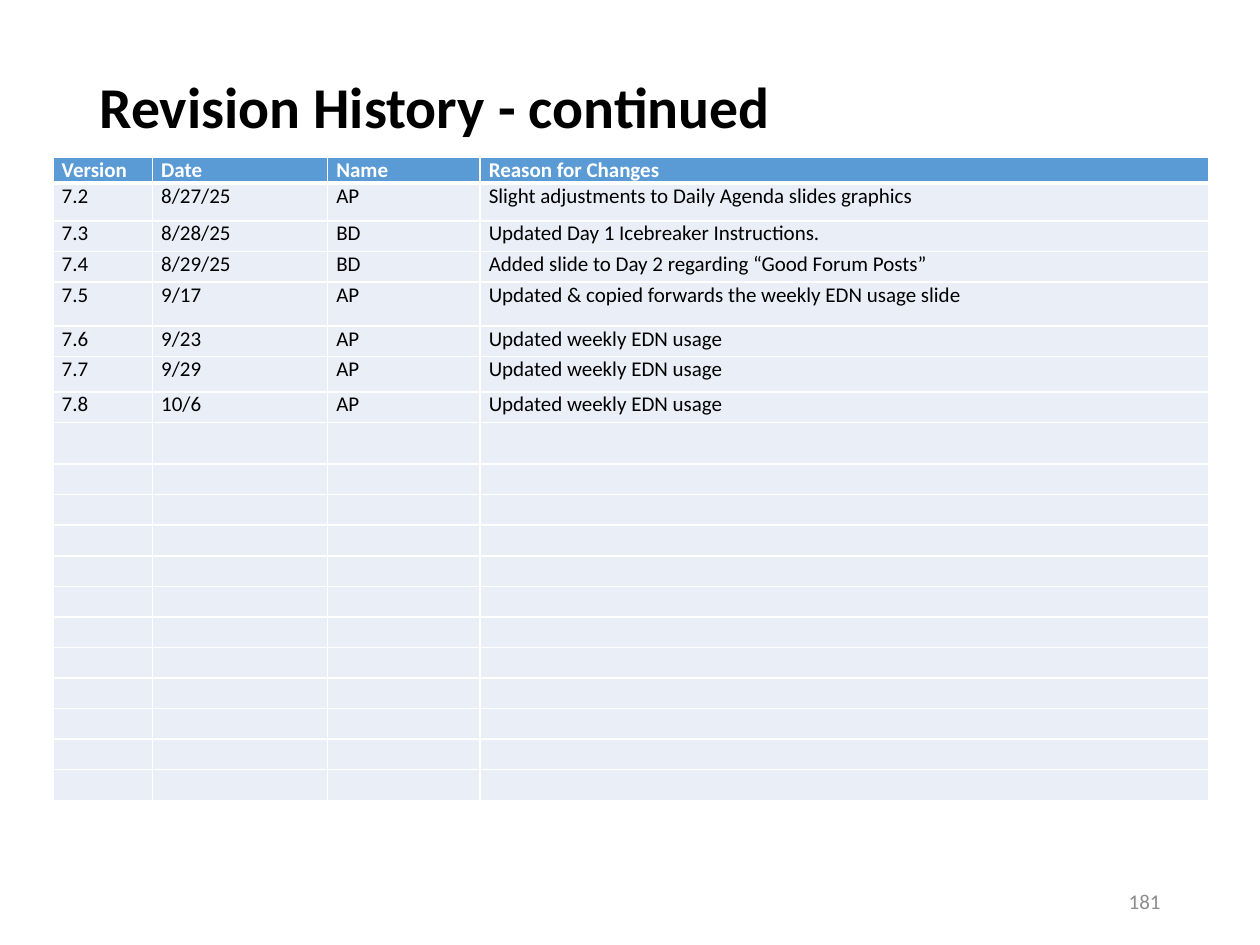
import pptx
import pptx.dml.color
import pptx.enum.text
import pptx.oxml
import pptx.oxml.ns
import pptx.util

Inches, Pt = pptx.util.Inches, pptx.util.Pt
Anchor, Align = pptx.enum.text.MSO_ANCHOR, pptx.enum.text.PP_ALIGN

TITLE = "Revision History - continued"
PAGE_NUMBER = "181"
HEADER = ("Version", "Date", "Name", "Reason for Changes")
REVISIONS = [
    ("7.2", "8/27/25", "AP", "Slight adjustments to Daily Agenda slides graphics"),
    ("7.3", "8/28/25", "BD", "Updated Day 1 Icebreaker Instructions."),
    ("7.4", "8/29/25", "BD", "Added slide to Day 2 regarding “Good Forum Posts”"),
    ("7.5", "9/17", "AP", "Updated & copied forwards the weekly EDN usage slide"),
    ("7.6", "9/23", "AP", "Updated weekly EDN usage"),
    ("7.7", "9/29", "AP", "Updated weekly EDN usage"),
    ("7.8", "10/6", "AP", "Updated weekly EDN usage"),
]
EMPTY_ROWS = 12
COLORS = {"text": "000000", "header": "5B9BD5", "body": "EAEFF7",
          "white": "FFFFFF", "number": "8C8C8C"}

SLIDE_WIDTH, SLIDE_HEIGHT = 10, 7.5
MARGIN = 0.69
COLUMN_WIDTHS = (0.79, 1.39, 1.21, 5.78)
TABLE_LEFT, TABLE_TOP, TABLE_HEIGHT = 0.42, 1.25, 5.1
SPECIAL_HEIGHTS = {0: 0.2, 1: 0.3, 4: 0.35, 6: 0.28, 8: 0.33}

TITLE_FRAME = {"vertical_anchor": Anchor.MIDDLE, "word_wrap": True,
               "auto_size": pptx.enum.text.MSO_AUTO_SIZE.NONE,
               "margin_bottom": Inches(0.55)}
NUMBER_FRAME = {"vertical_anchor": Anchor.MIDDLE, "word_wrap": True}
CELL_FORMAT = {"margin_left": Inches(0.07), "margin_right": Inches(0.07),
               "margin_top": 0, "margin_bottom": 0, "vertical_anchor": Anchor.TOP}


def apply(target, values):
    for name, value in values.items():
        setattr(target, name, value)


def rgb(name):
    return pptx.dml.color.RGBColor.from_string(COLORS[name])


def write(paragraph, text, size, color, bold=False):
    run = paragraph.add_run()
    run.text = text
    apply(run.font, {"name": "Calibri", "size": Pt(size), "bold": bold})
    run.font.color.rgb = rgb(color)


def add_borders(cell, bottom_width):
    properties = cell._tc.get_or_add_tcPr()
    for side, width in (("L", 1), ("R", 1), ("T", 1), ("B", bottom_width)):
        properties.append(pptx.oxml.parse_xml(
            f'<a:ln{side} {pptx.oxml.ns.nsdecls("a")} w="{Pt(width)}"><a:solidFill>'
            f'<a:srgbClr val="{COLORS["white"]}"/></a:solidFill></a:ln{side}>'))


def add_title(slide):
    title = slide.shapes.title
    apply(title, {"left": Inches(MARGIN), "top": Inches(0.4),
                  "width": Inches(SLIDE_WIDTH - 2 * MARGIN), "height": Inches(1.45)})
    apply(title.text_frame, TITLE_FRAME)
    paragraph = title.text_frame.paragraphs[0]
    apply(paragraph, {"alignment": Align.LEFT, "line_spacing": 0.9})
    write(paragraph, TITLE, 33, "text", True)


def add_revision_table(slide):
    rows = [HEADER, *REVISIONS, *[("",) * len(HEADER)] * EMPTY_ROWS]
    regular_height = ((TABLE_HEIGHT - sum(SPECIAL_HEIGHTS.values()))
                      / (len(rows) - len(SPECIAL_HEIGHTS)))
    table = slide.shapes.add_table(
        len(rows), len(HEADER), Inches(TABLE_LEFT), Inches(TABLE_TOP),
        Inches(sum(COLUMN_WIDTHS)), Inches(TABLE_HEIGHT)).table
    table.horz_banding = False
    for column, width in zip(table.columns, COLUMN_WIDTHS):
        column.width = Inches(width)
    for index, values in enumerate(rows):
        is_header = index == 0
        table.rows[index].height = Inches(SPECIAL_HEIGHTS.get(index, regular_height))
        for cell, text in zip(table.rows[index].cells, values):
            apply(cell, CELL_FORMAT)
            add_borders(cell, 3 if is_header else 1)
            cell.fill.solid()
            cell.fill.fore_color.rgb = rgb("header" if is_header else "body")
            paragraph = cell.text_frame.paragraphs[0]
            if text:
                write(paragraph, text, 12, "white" if is_header else "text", is_header)
            else:
                # An empty cell takes its line height from the paragraph end mark.
                paragraph._p.get_or_add_endParaRPr().set("sz", "1200")


def add_page_number(slide):
    width = 2.25
    box = slide.shapes.add_textbox(Inches(SLIDE_WIDTH - MARGIN - width), Inches(6.95),
                                   Inches(width), Inches(0.4))
    apply(box.text_frame, NUMBER_FRAME)
    paragraph = box.text_frame.paragraphs[0]
    paragraph.alignment = Align.RIGHT
    write(paragraph, PAGE_NUMBER, 12, "number")


def main():
    presentation = pptx.Presentation()
    apply(presentation, {"slide_width": Inches(SLIDE_WIDTH),
                         "slide_height": Inches(SLIDE_HEIGHT)})
    slide = presentation.slides.add_slide(
        presentation.slide_layouts.get_by_name("Title Only"))
    add_title(slide)
    add_revision_table(slide)
    add_page_number(slide)
    presentation.save("out.pptx")


if __name__ == "__main__":
    main()
